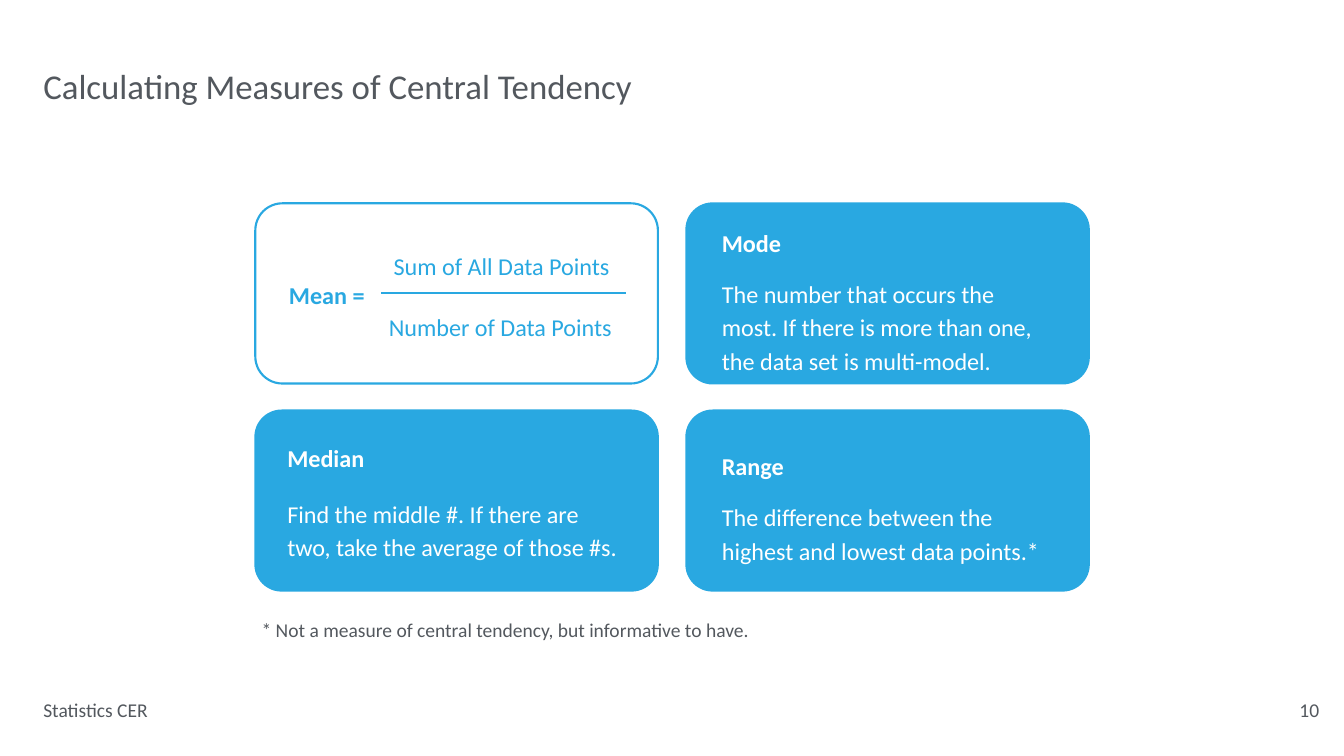
"""Build the slide on calculating measures of central tendency."""
from lxml import etree
from pptx import Presentation
from pptx import util as u
from pptx.dml.color import RGBColor
from pptx.enum import shapes, text
from pptx.oxml.ns import qn

COLORS = {"blue": "29A8E1", "white": "FFFFFF", "grey": "53585E"}
CARD_LEFT, CARD_TOP, CARD_W, CARD_H = 10.57, 8.41, 16.81, 7.57
STEP_X, STEP_Y = 17.91, 8.61


class SlideBuilder:
    font = "Calibri"
    line_width = u.Pt(2.5)

    def __init__(self, slide):
        self.slide = slide

    def color(self, name):
        return RGBColor.from_string(COLORS[name])

    def frame(self, sp, top_inset=0):
        tf = sp.text_frame
        tf.word_wrap = True
        tf.auto_size = text.MSO_AUTO_SIZE.NONE
        tf.vertical_anchor = text.MSO_ANCHOR.TOP
        tf.margin_left = tf.margin_right = tf.margin_bottom = 0
        tf.margin_top = u.Cm(top_inset)
        return tf

    def paragraph(self, p, words, size, color, bold=False, spacing=1.0, before=0, indent=0):
        p.text = words
        p.alignment = text.PP_ALIGN.LEFT
        p.line_spacing, p.space_before = spacing, u.Pt(before)
        p.font.name, p.font.size, p.font.bold = self.font, u.Pt(size), bold
        p.font.color.rgb = self.color(color)
        if indent:
            p._p.get_or_add_pPr().set("marL", str(u.Cm(indent)))

    def title(self, words, left, top, width, height):
        sp = self.slide.shapes.title
        sp.left, sp.top, sp.width, sp.height = map(u.Cm, (left, top, width, height))
        self.paragraph(self.frame(sp, 0.3).paragraphs[0], words, 41, "grey")

    def textbox(self, left, top, width, height, paragraphs, size=28.5, color="white"):
        sp = self.slide.shapes.add_textbox(*map(u.Cm, (left, top, width, height)))
        tf = self.frame(sp)
        for i, (words, style) in enumerate(paragraphs):
            p = tf.add_paragraph() if i else tf.paragraphs[0]
            self.paragraph(p, words, size, color, **style)

    def card(self, col, row, outlined=False):
        inset = 0.04 if outlined else 0
        sp = self.slide.shapes.add_shape(
            shapes.MSO_SHAPE.ROUNDED_RECTANGLE,
            u.Cm(CARD_LEFT + col * STEP_X + inset), u.Cm(CARD_TOP + row * STEP_Y + inset),
            u.Cm(CARD_W - 2 * inset), u.Cm(CARD_H - 2 * inset))
        sp.adjustments[0] = 0.15
        sp.shadow.inherit = False
        if outlined:
            sp.fill.background()
            sp.line.color.rgb = self.color("blue")
            sp.line.width = self.line_width
        else:
            sp.fill.solid()
            sp.fill.fore_color.rgb = self.color("blue")
            sp.line.fill.background()

    def definition(self, left, top, width, height, term, meaning, gap=20.6):
        self.textbox(left, top, width, height, [
            (term, {"bold": True}),
            (meaning, {"spacing": 1.16, "before": gap})])

    def rule(self, x1, x2, y):
        line = self.slide.shapes.add_connector(
            shapes.MSO_CONNECTOR.STRAIGHT, u.Cm(x1), u.Cm(y), u.Cm(x2), u.Cm(y))
        line.line.color.rgb = self.color("blue")
        line.line.width = self.line_width
        etree.SubElement(line._element.spPr, qn("a:effectLst"))


def main():
    prs = Presentation()
    prs.slide_width, prs.slide_height = u.Cm(55.85), u.Cm(31.42)
    s = SlideBuilder(prs.slides.add_slide(prs.slide_layouts[5]))

    s.title("Calculating Measures of Central Tendency", 1.8, 2.39, 24.89, 2.06)
    for row in range(2):
        for col in range(2):
            s.card(col, row, outlined=(row, col) == (0, 0))

    s.textbox(12.01, 10.31, 13.92, 3.86, [
        ("Sum of All Data Points", {"spacing": 1.12, "indent": 4.35}),
        ("Mean =", {"bold": True}),
        ("Number of Data Points", {"spacing": 1.08, "indent": 4.15})], color="blue")
    s.rule(15.85, 26.01, 12.19)

    s.definition(30, 9.47, 13.5, 6.4, "Mode",
                 "The number that occurs the most. If there is more than one, "
                 "the data set is multi-model.")
    s.definition(11.94, 18.41, 14.05, 4.8, "Median",
                 "Find the middle #. If there are two, take the average of those #s.", 26.4)
    s.definition(30, 18.75, 13.5, 4.8, "Range",
                 "The difference between the highest and lowest data points.*")

    for left, top, width, words in (
            (10.87, 25.68, 34.4, "* Not a measure of central tendency, but informative to have."),
            (1.8, 29.03, 4.65, "Statistics CER"),
            (54, 29.03, 1, "10")):
        s.textbox(left, top, width, 1, [(words, {})], 23, "grey")

    prs.save("out.pptx")


if __name__ == "__main__":
    main()
